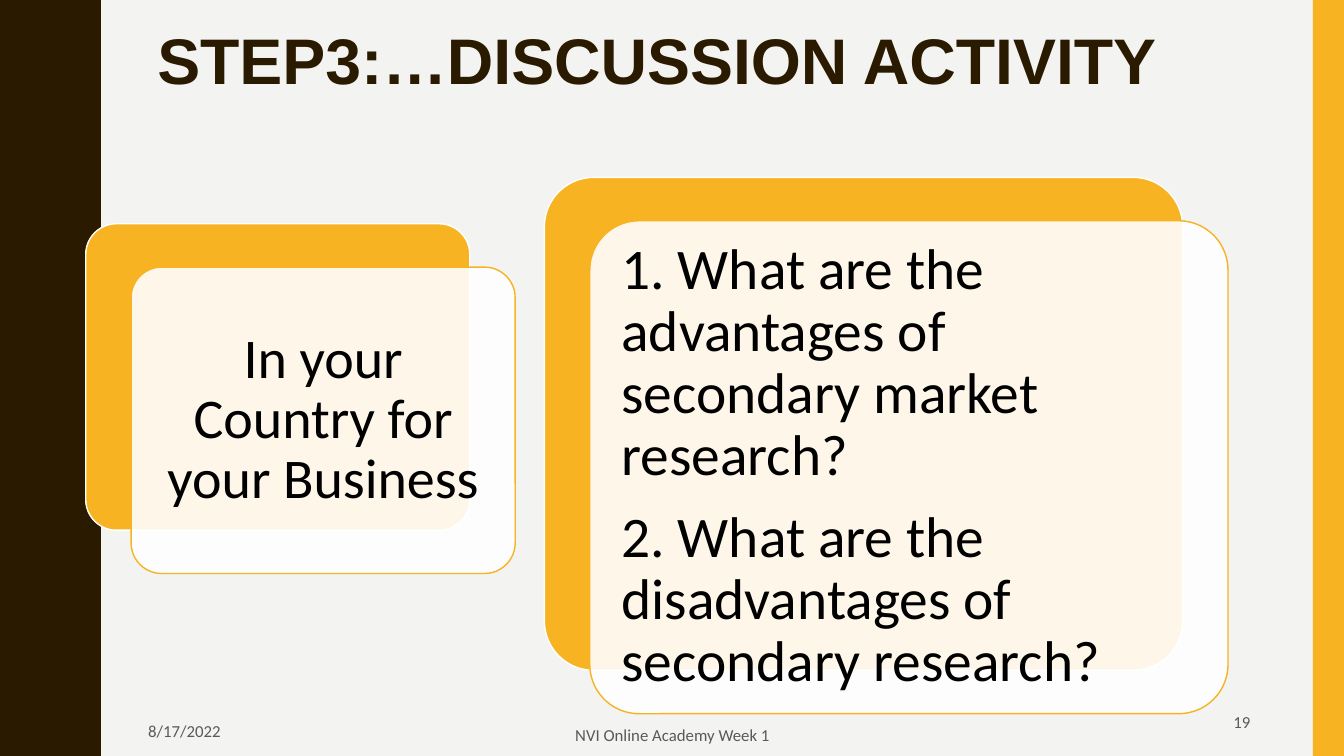
import pptx
import pptx.util
import pptx.dml.color
import pptx.enum.shapes
import pptx.enum.text
import lxml.etree

Inch = pptx.util.Inches
Pt = pptx.util.Pt
Align = pptx.enum.text.PP_ALIGN
Kind = pptx.enum.shapes.MSO_SHAPE

# Content
TITLE = "STEP3:…DISCUSSION ACTIVITY"
PLACE = ["In your Country for your Business"]
ASKS = ["1. What are the advantages of secondary market research?",
        "2. What are the disadvantages of secondary research?"]
# text, box, alignment
FOOT = [("8/17/2022", (1.37, 7.06, 2.55, 0.38), Align.LEFT),
        ("NVI Online Academy Week 1", (4.42, 7.1, 4.5, 0.38), Align.CENTER),
        ("19", (9.42, 6.97, 3.08, 0.38), Align.RIGHT)]

# Look
WIDE, HIGH = 13.33, 7.5
PAPER, DARK, GOLD, AMBER = "F3F3F2", "2A1A00", "F8B323", "F7B321"
WHITE, BLACK, GREY = "FFFFFF", "000000", "595959"
STEP = (0.45, 0.43)     # shift from back card to front card
ROUND = 0.1             # corner radius as a share of the short side
INSET = 0.293 * ROUND   # keeps text clear of the corners
WAVES = 5
# outward half of one wave: x, y
CURVE = [(0.78, 0), (0.78, 0.07), (0.79, 0.14), (0.8, 0.2), (0.81, 0.25),
         (0.83, 0.29), (0.85, 0.33), (0.87, 0.38), (0.89, 0.42), (0.91, 0.46),
         (0.93, 0.5), (0.95, 0.55), (0.96, 0.61), (0.97, 0.68), (0.97, 0.75)]


def color(code):
    return pptx.dml.color.RGBColor.from_string(code)


def add_tag(node, name, **attrs):
    return lxml.etree.SubElement(node, pptx.oxml.ns.qn(name), attrs)


def paint(shape, fill, line=None, alpha=None):
    shape.shadow.inherit = False
    shape.fill.solid()
    shape.fill.fore_color.rgb = color(fill)
    if alpha:
        tone = shape.fill._xPr.find(".//" + pptx.oxml.ns.qn("a:srgbClr"))
        add_tag(tone, "a:alpha", val=str(alpha * 1000))
    if line:
        shape.line.color.rgb = color(line)
        shape.line.width = Pt(1)
    else:
        shape.line.fill.background()


def put(shape, box):
    shape.left, shape.top, shape.width, shape.height = map(Inch, box)


def write(shape, lines, size, tint, align, font="Calibri", bold=False,
          pad=(0.1, 0.05), lead=1.0, gap=0):
    frame = shape.text_frame
    frame.word_wrap = True
    frame.auto_size = pptx.enum.text.MSO_AUTO_SIZE.NONE
    frame.vertical_anchor = pptx.enum.text.MSO_ANCHOR.MIDDLE
    frame.margin_left = frame.margin_right = Inch(pad[0])
    frame.margin_top = frame.margin_bottom = Inch(pad[1])
    frame.text = "\n".join(lines)
    for i, par in enumerate(frame.paragraphs):
        par.alignment = align
        par.line_spacing = lead
        par.space_before = Pt(gap if i else 0)
        for run in par.runs:
            run.font.name = font
            run.font.size = Pt(size)
            run.font.bold = bold
            run.font.color.rgb = color(tint)


def add_card(shapes, box):
    """Draw a back and a front card; return the box for the text."""
    left, top, wide, high = box
    front = (left + STEP[0], top + STEP[1], wide, high)
    for spot, look in ((box, (AMBER, WHITE)), (front, (WHITE, AMBER, 90))):
        card = shapes.add_shape(Kind.ROUNDED_RECTANGLE, *map(Inch, spot))
        card.adjustments[0] = ROUND
        paint(card, *look)
    edge = INSET * min(wide, high)
    return (front[0] + edge, front[1] + edge, wide - 2 * edge, high - 2 * edge)


def add_wave(shapes):
    span = HIGH / WAVES
    back = [(x, span - y) for x, y in CURVE[-2::-1]]
    edge = [(x, y + n * span) for n in range(WAVES) for x, y in CURVE + back]
    form = shapes.build_freeform(0, 0, scale=Inch(1))
    form.add_line_segments(edge + [(0, HIGH)], close=True)
    paint(form.convert_to_shape(), DARK)


def main():
    deck = pptx.Presentation()
    deck.slide_width, deck.slide_height = Inch(WIDE), Inch(HIGH)
    slide = deck.slides.add_slide(deck.slide_layouts[1])
    shapes = slide.shapes
    title, body = shapes.title, slide.placeholders[1]

    # Backdrop
    slide.background.fill.solid()
    slide.background.fill.fore_color.rgb = color(PAPER)
    add_wave(shapes)
    band = shapes.add_shape(Kind.RECTANGLE, Inch(13.02), 0,
                            Inch(WIDE - 13.02), Inch(HIGH))
    paint(band, GOLD)

    # Title
    put(title, (1.46, 0.25, 11.13, 0.77))
    write(title, [TITLE], 46, DARK, Align.LEFT, "Arial", True, lead=0.9)

    # Place card
    spot = add_card(shapes, (0.85, 2.22, 3.81, 3.04))
    place = shapes.add_textbox(*map(Inch, spot))
    write(place, PLACE, 40, BLACK, Align.CENTER, pad=(0.17, 0.17), lead=0.9)

    # Question card, with the list brought above it
    put(body, add_card(shapes, (5.4, 1.76, 6.33, 4.89)))
    write(body, ASKS, 41, BLACK, Align.LEFT, pad=(0.17, 0.17), lead=0.9,
          gap=14.3)
    for par in body.text_frame.paragraphs:
        prop = par._p.get_or_add_pPr()
        prop.set("marL", "0")
        prop.set("indent", "0")
        add_tag(prop, "a:buNone")
    shapes._spTree.append(body._element)

    # Footer
    for text, box, align in FOOT:
        note = shapes.add_textbox(*map(Inch, box))
        write(note, [text], 12, GREY, align)

    deck.save("out.pptx")


if __name__ == "__main__":
    main()
